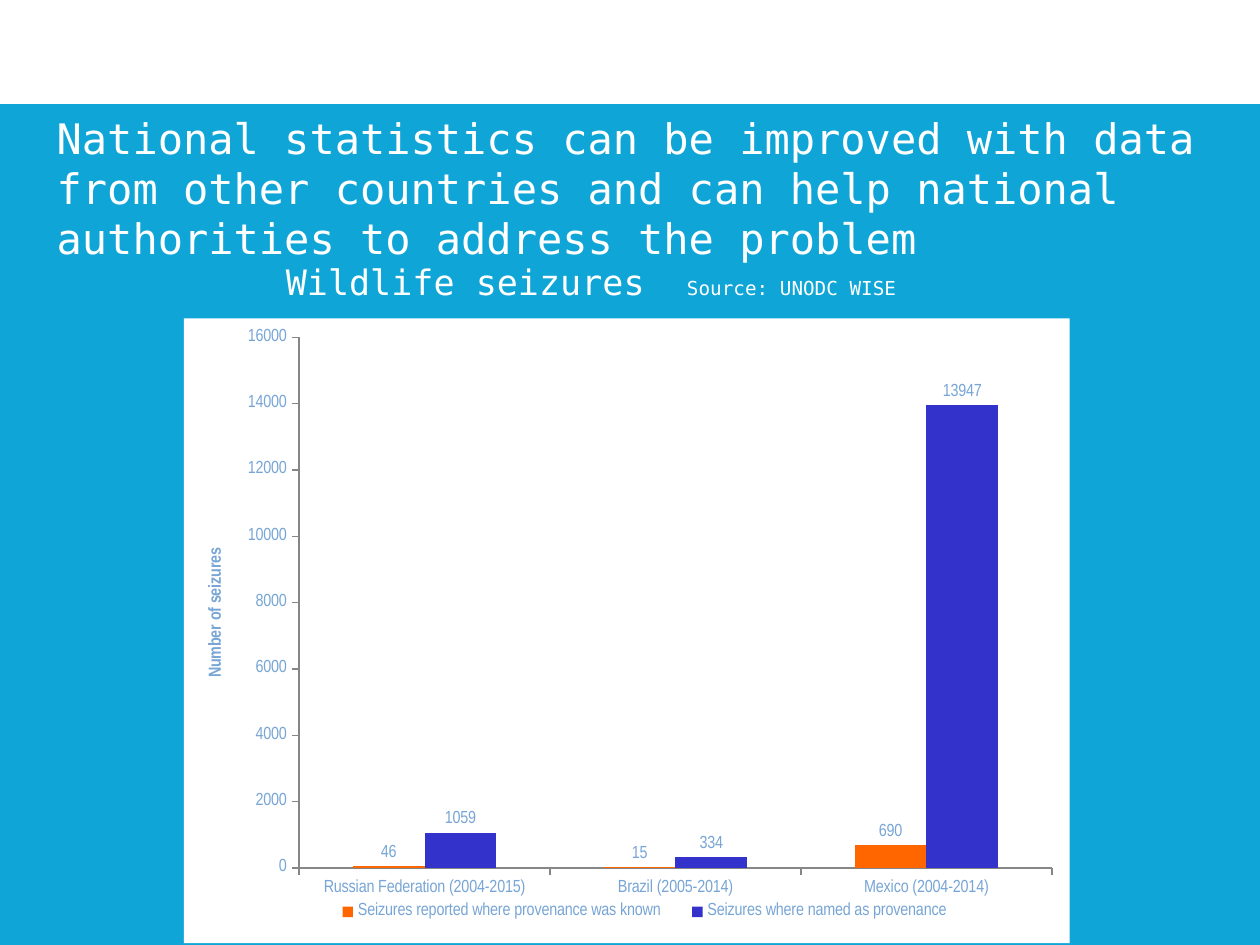
from dataclasses import dataclass

from pptx import Presentation
from pptx.chart.data import CategoryChartData
from pptx.dml.color import RGBColor
from pptx.enum.chart import XL_CHART_TYPE as Kind, XL_LABEL_POSITION as LabelPos
from pptx.enum.chart import XL_LEGEND_POSITION as LegendPos, XL_TICK_MARK as Tick
from pptx.enum.shapes import MSO_SHAPE as Shape
from pptx.enum.text import MSO_ANCHOR as Anchor, MSO_AUTO_SIZE as AutoSize, PP_ALIGN as Align
from pptx.oxml import parse_xml
from pptx.oxml.ns import nsdecls, qn
from pptx.util import Inches, Pt


@dataclass(frozen=True)
class Theme:
    back: str = "0FA6D7"
    paper: str = "FFFFFF"
    label: str = "77A5D5"
    axis: str = "868686"
    series: tuple = ("FF6600", "3333CC")
    text_font: str = "DejaVu Sans Mono"
    chart_font: str = "Arial Narrow"
    title_size: int = 24
    caption_size: int = 20
    source_size: int = 11
    chart_size: int = 10


def rgb(value):
    return RGBColor.from_string(value)


def apply(target, **values):
    for name, value in values.items():
        setattr(target, name, value)


def paint(fill, color):
    fill.solid()
    fill.fore_color.rgb = rgb(color)


def place(parent, index, **shares):
    old = parent.find(qn("c:layout"))
    if old is not None:
        parent.remove(old)
    modes = '<c:layoutTarget val="inner"/>' if index == 0 else ""
    modes += '<c:xMode val="edge"/><c:yMode val="edge"/>'
    sizes = "".join(f'<c:{k} val="{v}"/>' for k, v in shares.items())
    parent.insert(index, parse_xml(
        f'<c:layout {nsdecls("c")}><c:manualLayout>{modes}{sizes}</c:manualLayout></c:layout>'))


def panel(color):
    return parse_xml(
        f'<c:spPr {nsdecls("c", "a")}><a:solidFill><a:srgbClr val="{color}"/></a:solidFill>'
        '<a:ln><a:noFill/></a:ln></c:spPr>')


class Deck:
    """Holds the theme and the current slide, and adds elements by shares of its size."""

    def __init__(self, theme):
        self.theme = theme
        self.prs = Presentation()
        apply(self.prs, slide_width=Inches(10), slide_height=Inches(7.5))
        self.s = self.prs.slides.add_slide(self.prs.slide_layouts[5])
        paint(self.s.background.fill, theme.back)

    def box(self, x, y, w, h):
        width, height = self.prs.slide_width, self.prs.slide_height
        return [int(v) for v in (x * width, y * height, w * width, h * height)]

    def band(self, *shares):
        sp = self.s.shapes.add_shape(Shape.RECTANGLE, *self.box(*shares))
        sp.shadow.inherit = False
        paint(sp.fill, self.theme.paper)
        sp.line.fill.background()

    def set_text(self, sp, *runs):
        tf = sp.text_frame
        apply(tf, word_wrap=True, auto_size=AutoSize.NONE, vertical_anchor=Anchor.TOP)
        p = tf.paragraphs[0]
        p.alignment = Align.LEFT
        for text, size in runs:
            r = p.add_run()
            r.text = text
            apply(r.font, size=Pt(size), name=self.theme.text_font)
            r.font.color.rgb = rgb(self.theme.paper)

    def title(self, text, *shares):
        sp = self.s.shapes.title
        apply(sp, **dict(zip(("left", "top", "width", "height"), self.box(*shares))))
        self.set_text(sp, (text, self.theme.title_size))

    def caption(self, text, source, *shares):
        sp = self.s.shapes.add_textbox(*self.box(*shares))
        self.set_text(sp, (text, self.theme.caption_size), (source, self.theme.source_size))

    def columns(self, categories, series, axis_title, *shares):
        t = self.theme
        data = CategoryChartData()
        data.categories = categories
        for name, values in series.items():
            data.add_series(name, values)
        frame = self.s.shapes.add_chart(Kind.COLUMN_CLUSTERED, *self.box(*shares), data)
        chart = frame.chart
        apply(chart, has_title=False, has_legend=True)
        apply(chart.font, size=Pt(t.chart_size), name=t.chart_font)
        chart.font.color.rgb = rgb(t.label)
        apply(chart.legend, position=LegendPos.BOTTOM, include_in_layout=False)

        plot = chart.plots[0]
        apply(plot, gap_width=150, overlap=0, vary_by_categories=False)
        for item, color in zip(plot.series, t.series):
            paint(item.format.fill, color)
            apply(item.data_labels, show_value=True, position=LabelPos.OUTSIDE_END)

        for axis in (chart.category_axis, chart.value_axis):
            apply(axis, has_major_gridlines=False, major_tick_mark=Tick.OUTSIDE,
                  minor_tick_mark=Tick.NONE)
            axis.format.line.color.rgb = rgb(t.axis)
        apply(chart.value_axis, minimum_scale=0, maximum_scale=16000, major_unit=2000)
        tf = chart.value_axis.axis_title.text_frame
        tf.text = axis_title
        font = tf.paragraphs[0].runs[0].font
        apply(font, bold=True, size=Pt(t.chart_size), name=t.chart_font)
        font.color.rgb = rgb(t.label)

        root = chart.element
        area = root.find(".//" + qn("c:plotArea"))
        place(area, 0, x=0.13, y=0.03, w=0.85, h=0.85)
        place(root.find(".//" + qn("c:legend")), 1, x=0.15, y=0.93, w=0.74, h=0.04)
        area.append(panel(t.paper))
        root.find(qn("c:chart")).addnext(panel(t.paper))


def main():
    deck = Deck(Theme())
    deck.band(0, 0, 1, 0.11)
    deck.title("National statistics can be improved with data from other countries "
               "and can help national authorities to address the problem",
               0.035, 0.112, 0.953, 0.175)
    deck.columns(
        ["Russian Federation (2004-2015)", "Brazil (2005-2014)", "Mexico (2004-2014)"],
        {"Seizures reported where provenance was known": (46, 15, 690),
         "Seizures where named as provenance": (1059, 334, 13947)},
        "Number of seizures", 0.146, 0.337, 0.703, 0.661)
    deck.caption("Wildlife seizures  ", "Source: UNODC WISE", 0.217, 0.269, 0.638, 0.059)
    deck.prs.save("out.pptx")


if __name__ == "__main__":
    main()
